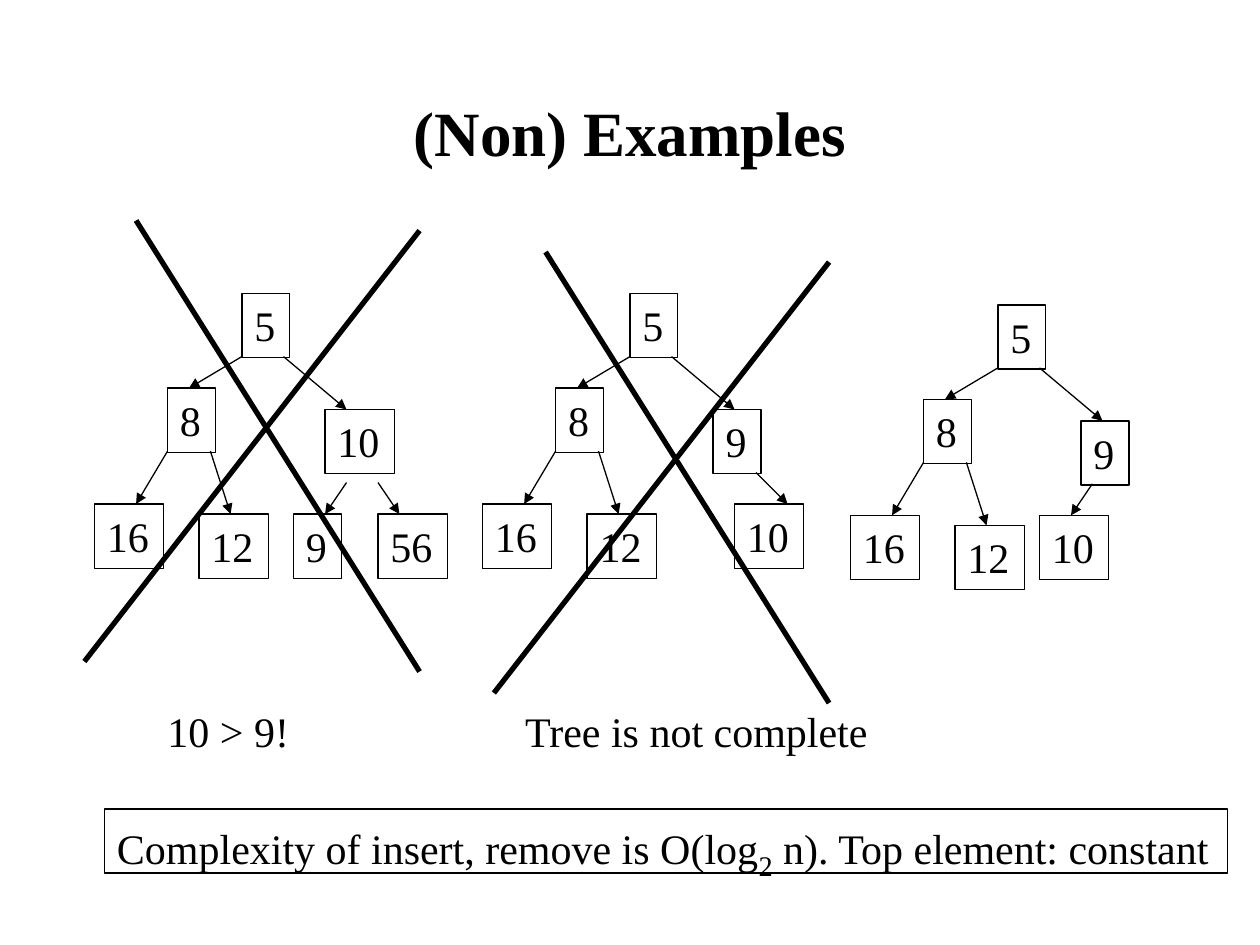
from lxml import etree
from pptx import Presentation
from pptx.dml.color import RGBColor
from pptx.enum.shapes import MSO_CONNECTOR, MSO_SHAPE
from pptx.enum.text import MSO_ANCHOR, PP_ALIGN
from pptx.oxml.ns import qn
from pptx.util import Inches, Pt

RECTANGLE = MSO_SHAPE.RECTANGLE
STRAIGHT = MSO_CONNECTOR.STRAIGHT
LEFT, CENTER = PP_ALIGN.LEFT, PP_ALIGN.CENTER
TOP, MIDDLE = MSO_ANCHOR.TOP, MSO_ANCHOR.MIDDLE

COLORS = {"ink": "000000"}
FONT = "Times New Roman"
NODE_HEIGHT = 0.51
NODE_WIDTHS = {1: 0.38, 2: 0.55}

SHARED_EDGES = [
    (1.17, 0.5, 0.75, 0.75),
    (0.58, 1.25, 0.33, 1.67),
    (0.92, 1.25, 1.08, 1.75),
    (1.5, 0.5, 2, 0.92),
]
TREES = [
    {
        "origin": (0.75, 2.33),
        "right": "10",
        "leaves": [("9", 1.58, 1.75), ("56", 2.25, 1.75)],
        "edges": [(2, 1.5, 1.83, 1.75), (2.25, 1.5, 2.42, 1.75)],
    },
    {
        "origin": (3.83, 2.33),
        "right": "9",
        "leaves": [("10", 2, 1.67)],
        "edges": [(2.17, 1.42, 2.42, 1.67)],
    },
    {
        "origin": (6.75, 2.42),
        "right": "9",
        "leaves": [("10", 1.5, 1.67)],
        "edges": [(1.92, 1.42, 1.75, 1.67)],
    },
]


def ink():
    return RGBColor.from_string(COLORS["ink"])


def write_text(box, *runs, size=24, bold=False, align=LEFT, anchor=TOP, wrap=False):
    frame = box.text_frame
    frame.word_wrap = wrap
    frame.vertical_anchor = anchor
    para = frame.paragraphs[0]
    para.alignment = align
    for text, changes in runs:
        span = para.add_run()
        span.text = text
        span.font.name = FONT
        span.font.size = Pt(changes.get("size", size))
        span.font.bold = bold
        span.font.color.rgb = ink()
        if "baseline" in changes:
            span.font._element.set("baseline", str(changes["baseline"]))


def add_label(page, text, left, top, width, height, **style):
    box = page.shapes.add_textbox(Inches(left), Inches(top), Inches(width), Inches(height))
    write_text(box, (text, {}), **style)


def add_frame(page, left, top, width, height, *runs):
    box = page.shapes.add_shape(
        RECTANGLE, Inches(left), Inches(top), Inches(width), Inches(height)
    )
    box.shadow.inherit = False
    box.fill.background()
    box.line.color.rgb = ink()
    box.line.width = Pt(0.75)
    write_text(box, *runs)


def add_line(page, left, top, ends, weight, arrow=False):
    x1, y1, x2, y2 = ends
    line = page.shapes.add_connector(
        STRAIGHT, Inches(left + x1), Inches(top + y1), Inches(left + x2), Inches(top + y2)
    )
    line.line.color.rgb = ink()
    line.line.width = Pt(weight)
    if arrow:
        etree.SubElement(line.line._get_or_add_ln(), qn("a:tailEnd"), type="triangle")
    etree.SubElement(line._element.spPr, qn("a:effectLst"))


def add_tree(page, origin, right, leaves, edges):
    left, top = origin
    nodes = [
        ("5", 1.17, 0),
        ("8", 0.58, 0.75),
        (right, 1.83, 0.92),
        ("16", 0, 1.67),
        ("12", 0.83, 1.75),
    ]
    for value, x, y in nodes + leaves:
        add_frame(page, left + x, top + y, NODE_WIDTHS[len(value)], NODE_HEIGHT, (value, {}))
    for ends in SHARED_EDGES + edges:
        add_line(page, left, top, ends, 0.75, arrow=True)


def add_cross(page, left, top, width, height):
    add_line(page, left, top, (0.41, 0, width, height), 3)
    add_line(page, left, top, (0, height - 0.08, width, 0.08), 3)


def add_complexity_note(page, left, top, width, height):
    add_frame(
        page, left, top, width, height,
        ("Complexity of insert, remove is O(log", {}),
        ("2", {"size": 28, "baseline": -25000}),
        (" n). Top element: constant", {}),
    )


def main():
    deck = Presentation()
    deck.slide_width, deck.slide_height = Inches(10), Inches(7.5)
    page = deck.slides.add_slide(deck.slide_layouts[6])
    add_label(page, "(Non) Examples", 0.75, 0.42, 8.5, 1.25,
              size=36, bold=True, align=CENTER, anchor=MIDDLE, wrap=True)
    for tree in TREES:
        add_tree(page, **tree)
    for left, top in [(0.67, 1.75), (3.92, 2)]:
        add_cross(page, left, top, 2.66, 3.58)
    add_label(page, "10 > 9!", 1.23, 5.55, 1.17, 0.5)
    add_label(page, "Tree is not complete", 4.07, 5.55, 2.93, 0.5)
    add_complexity_note(page, 0.83, 6.42, 8.91, NODE_HEIGHT)
    deck.save("out.pptx")


if __name__ == "__main__":
    main()
